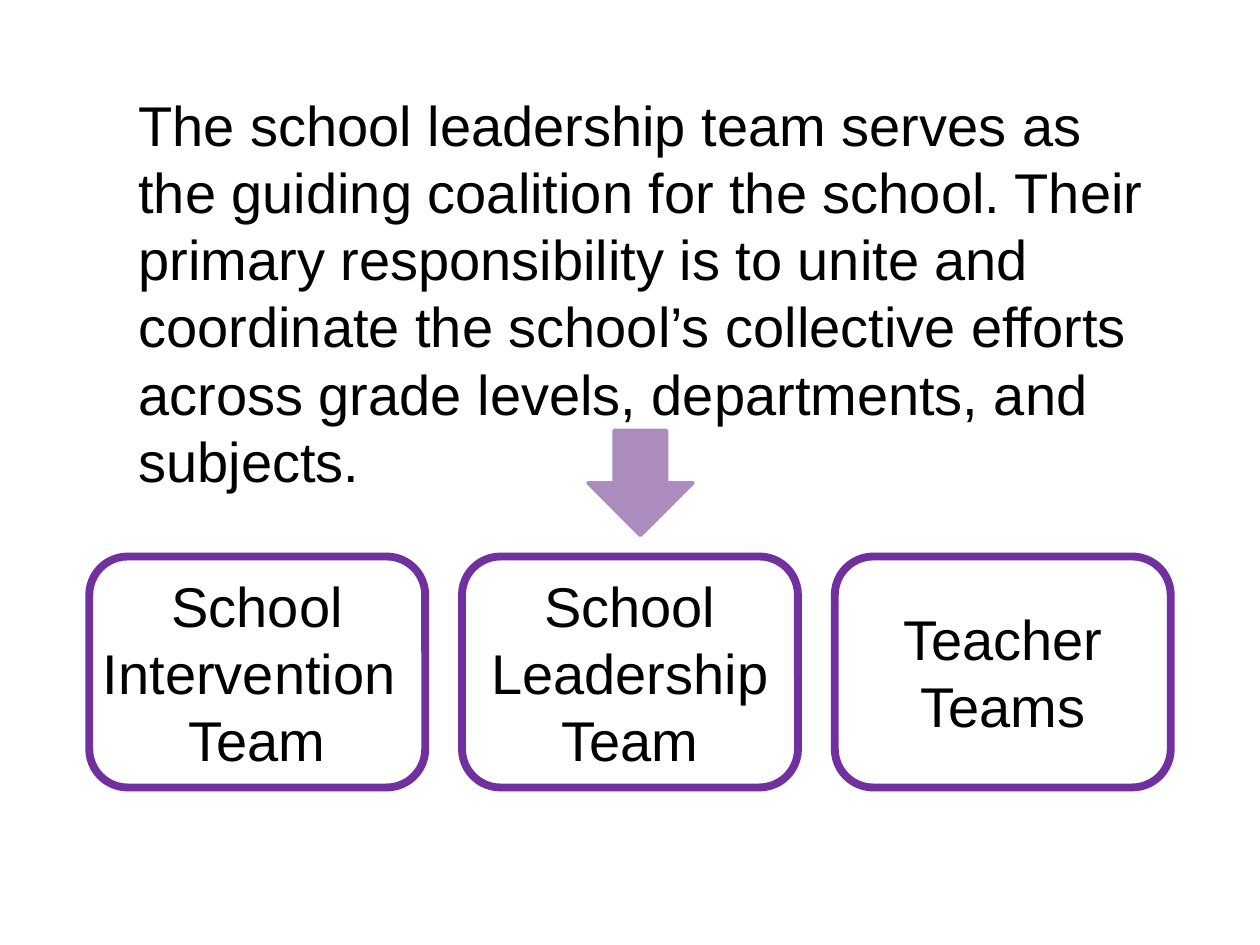
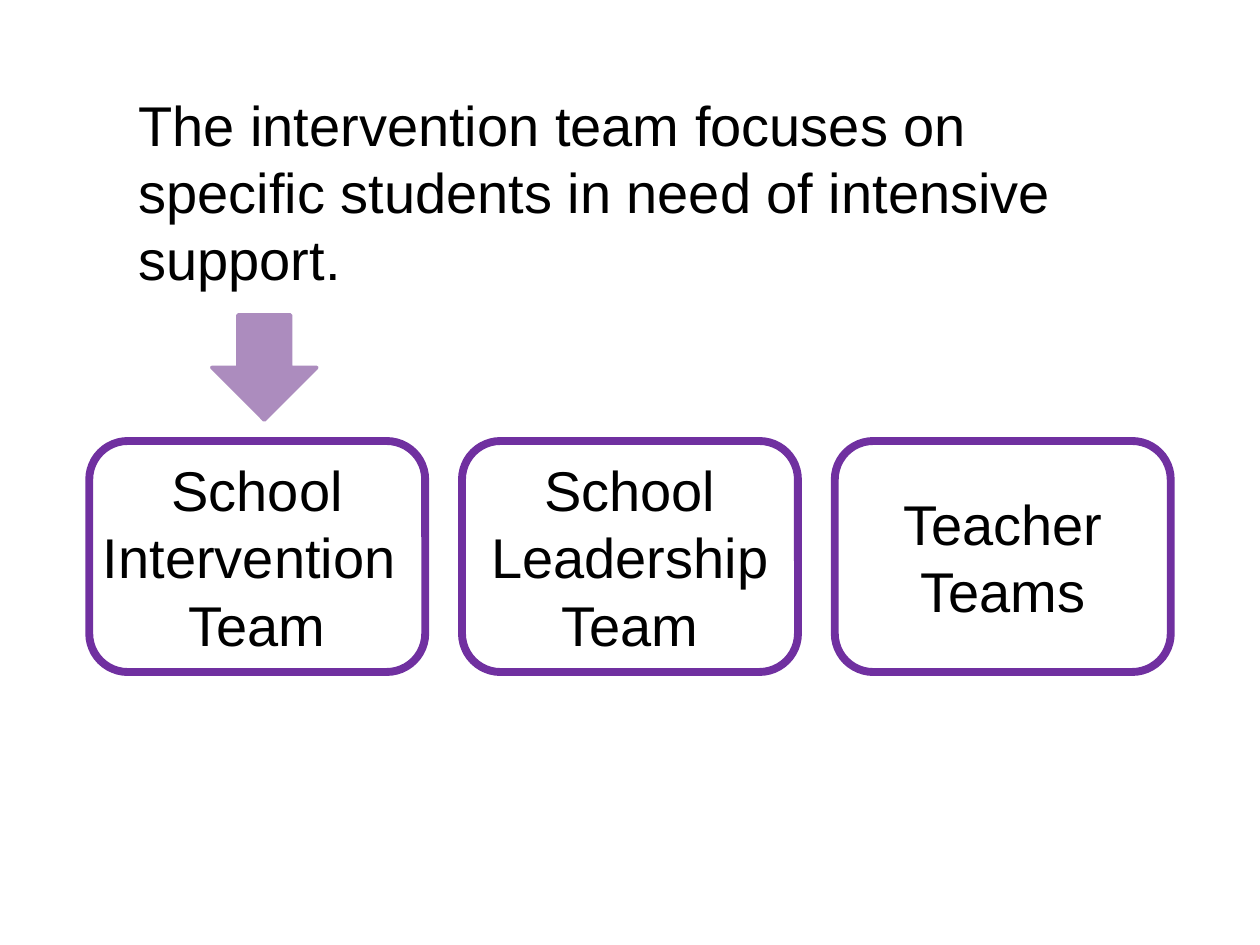
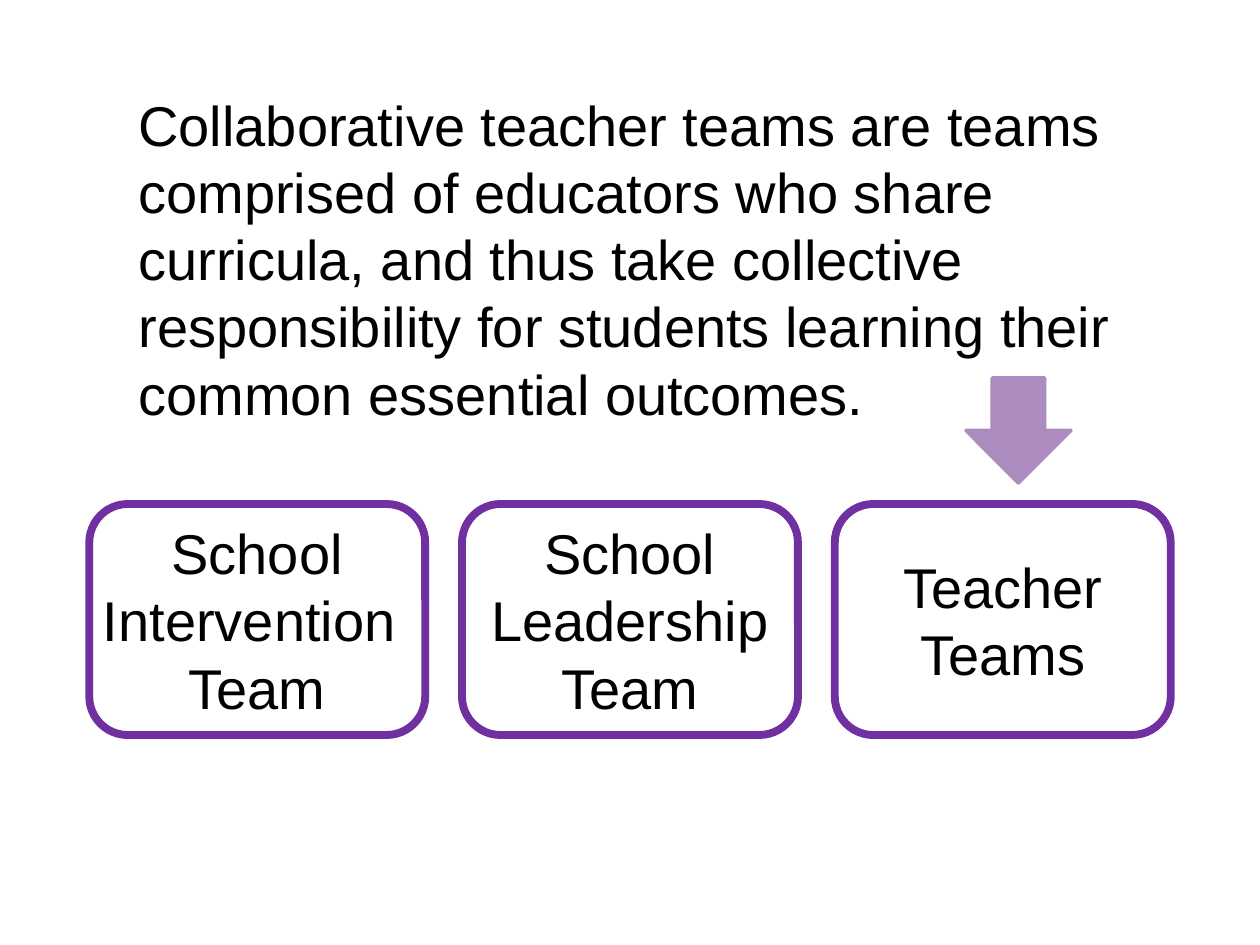
from pptx import Presentation
from pptx.dml.color import RGBColor
from pptx.enum import shapes, text
from pptx.util import Pt

BLACK = RGBColor(0x00, 0x00, 0x00)
PURPLE = RGBColor(0x70, 0x30, 0xA0)
LILAC = RGBColor(0xAC, 0x8C, 0xBE)
FONT = "Arial"
FONT_SIZE = 32

TEAM_LEFT, TEAM_PITCH = 51, 213
TEAM_WIDTH, TEAM_HEIGHT = 192, 132
ARROW_SIZE, ARROW_RISE = 60, 72

TEAMS = [
    ["School Intervention ", "Team"],
    ["School Leadership", "Team"],
    ["Teacher", "Teams"],
]

SLIDES = [
    {
        "statement": "The school leadership team serves as the guiding coalition "
                     "for the school. Their primary responsibility is to unite and "
                     "coordinate the school’s collective efforts across grade "
                     "levels, departments, and subjects.",
        "size": (597, 240),
        "teams_top": 318,
        "arrow_left": 336,
    },
    {
        "statement": "The intervention team focuses on specific students in need "
                     "of intensive support.",
        "size": (582, 124),
        "teams_top": 252,
        "arrow_left": 121,
    },
    {
        "statement": "Collaborative teacher teams are teams comprised of educators "
                     "who share curricula, and thus take collective responsibility "
                     "for students learning their common essential outcomes.",
        "size": (582, 201),
        "teams_top": 288,
        "arrow_left": 552,
    },
]


def write(tf, lines, align):
    tf.word_wrap = True
    for i, line in enumerate(lines):
        p = tf.paragraphs[0] if i == 0 else tf.add_paragraph()
        p.text = line
        p.alignment = align
        p.font.name = FONT
        p.font.size = Pt(FONT_SIZE)
        p.font.color.rgb = BLACK


def add_preset(s, kind, left, top, width, height, line_color, line_width):
    sp = s.shapes.add_shape(kind, Pt(left), Pt(top), Pt(width), Pt(height))
    sp.shadow.inherit = False
    sp.line.color.rgb = line_color
    sp.line.width = Pt(line_width)
    return sp


def add_team(s, left, top, lines):
    sp = add_preset(s, shapes.MSO_SHAPE.ROUNDED_RECTANGLE, left, top,
                    TEAM_WIDTH, TEAM_HEIGHT, PURPLE, 4.5)
    sp.fill.background()
    tf = sp.text_frame
    tf.margin_left = tf.margin_right = tf.margin_top = tf.margin_bottom = 0
    tf.vertical_anchor = text.MSO_ANCHOR.MIDDLE
    write(tf, lines, text.PP_ALIGN.CENTER)


def add_arrow(s, left, top):
    sp = add_preset(s, shapes.MSO_SHAPE.DOWN_ARROW, left, top,
                    ARROW_SIZE, ARROW_SIZE, LILAC, 2)
    sp.fill.solid()
    sp.fill.fore_color.rgb = LILAC


def add_statement(s, statement, width, height):
    sp = s.shapes.add_textbox(Pt(72), Pt(48), Pt(width), Pt(height))
    write(sp.text_frame, [statement], text.PP_ALIGN.LEFT)
    sp.text_frame.auto_size = text.MSO_AUTO_SIZE.SHAPE_TO_FIT_TEXT


def main():
    prs = Presentation()
    prs.slide_width, prs.slide_height = Pt(720), Pt(540)
    for content in SLIDES:
        s = prs.slides.add_slide(prs.slide_layouts[6])
        top = content["teams_top"]
        for i, lines in enumerate(TEAMS):
            add_team(s, TEAM_LEFT + i * TEAM_PITCH, top, lines)
        add_arrow(s, content["arrow_left"], top - ARROW_RISE)
        add_statement(s, content["statement"], *content["size"])
    prs.save("out.pptx")


if __name__ == "__main__":
    main()
